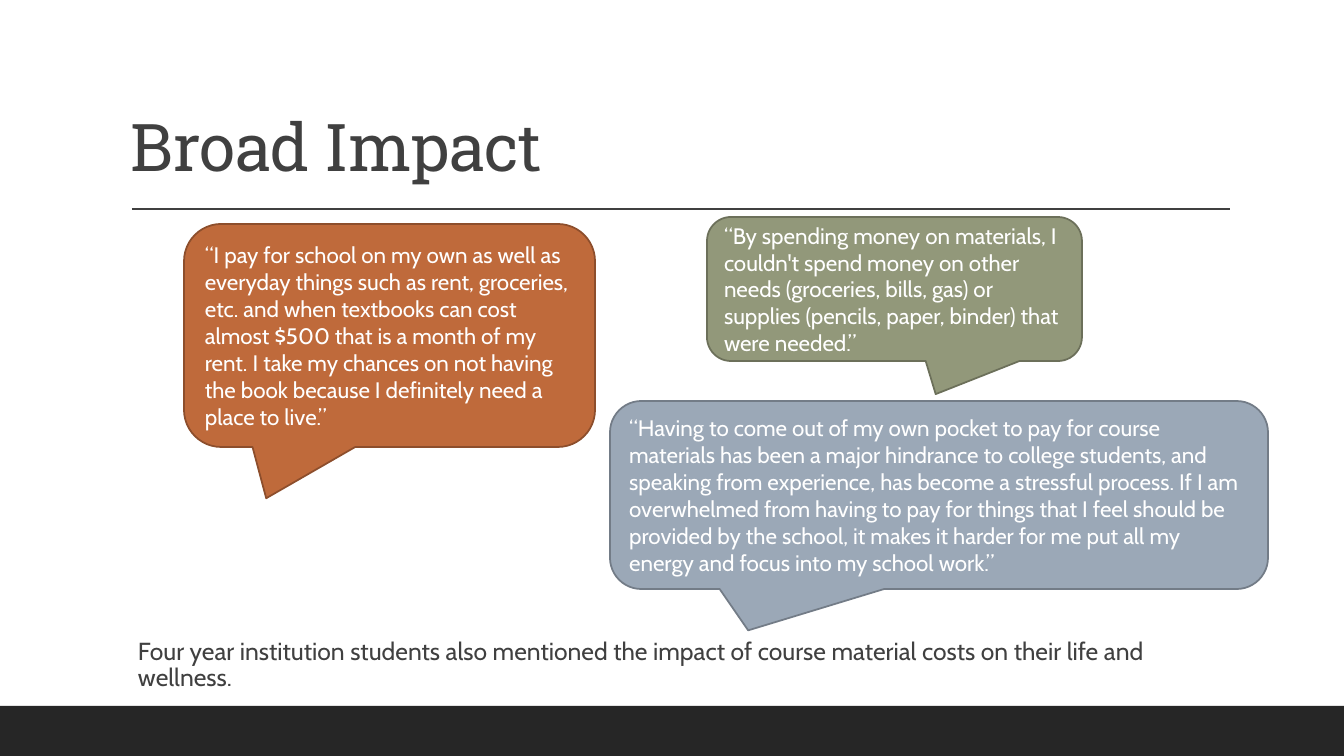
from pptx import Presentation
from pptx.dml.color import RGBColor
from pptx.enum.shapes import MSO_CONNECTOR, MSO_SHAPE
from pptx.enum.text import MSO_ANCHOR as ANCHOR, PP_ALIGN as ALIGN
from pptx.oxml.ns import qn
from pptx.util import Emu, Pt

INK = "404040"
BODY = "Cabin"

# box, fill, line, tip offset from the centre as shares of the box, words
QUOTES = [
    ((610, 401, 658, 188), "9BA8B7", "737C87", (-0.29, 0.72),
     "“Having to come out of my own pocket to pay for course materials has been "
     "a major hindrance to college students, and speaking from experience, has "
     "become a stressful process. If I am overwhelmed from having to pay for "
     "things that I feel should be provided by the school, it makes it harder "
     "for me put all my energy and focus into my school work.”"),
    ((184, 224, 411, 223), "BF6A3B", "8D4E2C", (-0.3, 0.73),
     "“I pay for school on my own as well as everyday things such as rent, "
     "groceries, etc. and when textbooks can cost almost $500 that is a month "
     "of my rent. I take my chances on not having the book because I definitely "
     "need a place to live.”"),
    ((707, 217, 375, 144), "92987A", "6C705A", (0.11, 0.73),
     "“By spending money on materials, I couldn't spend money on other needs "
     "(groceries, bills, gas) or supplies (pencils, paper, binder) that were "
     "needed.”"),
]


def px(n):
    return Emu(round(n * 914400 / 100.8))


def color(code):
    return RGBColor.from_string(code)


def write(shape, text, size, font=BODY, ink=INK, anchor=ANCHOR.TOP,
          inset=10, lead=None, before=0, after=0, track=None):
    frame = shape.text_frame
    frame.word_wrap = True
    frame.vertical_anchor = anchor
    frame.margin_left = frame.margin_right = px(inset)
    frame.margin_top = frame.margin_bottom = px(5)
    para = frame.paragraphs[0]
    para.alignment = ALIGN.LEFT
    para.space_before, para.space_after = Pt(before), Pt(after)
    if lead:
        para.line_spacing = lead
    run = para.add_run()
    run.text = text
    run.font.name, run.font.size = font, Pt(size)
    run.font.color.rgb = color(ink)
    if track:
        run.font._element.set("spc", str(round(track * 100)))


def add_text(slide, box, text, size, **form):
    write(slide.shapes.add_textbox(*map(px, box)), text, size, **form)


def add_band(slide, box):
    band = slide.shapes.add_shape(MSO_SHAPE.RECTANGLE, *map(px, box))
    band.shadow.inherit = False
    band.fill.solid()
    band.fill.fore_color.rgb = color("262626")
    band.line.fill.background()


def add_head(slide, box, text):
    """Place the title with the rule beneath it."""
    x, y, w, h = box
    rule_y = y + h + 18
    rule = slide.shapes.add_connector(
        MSO_CONNECTOR.STRAIGHT, *map(px, (x + 11, rule_y, x + w, rule_y)))
    rule.line.color.rgb = color(INK)
    rule.line.width = Pt(1)
    props = rule._element.spPr
    props.append(props.makeelement(qn("a:effectLst"), {}))
    add_text(slide, box, text, 47, font="Roboto Slab", anchor=ANCHOR.BOTTOM,
             lead=0.9, track=-0.5)


def add_quote(slide, box, fill, edge, tip, text):
    quote = slide.shapes.add_shape(
        MSO_SHAPE.ROUNDED_RECTANGULAR_CALLOUT, *map(px, box))
    quote.shadow.inherit = False
    quote.adjustments[0], quote.adjustments[1] = tip
    quote.fill.solid()
    quote.fill.fore_color.rgb = color(fill)
    quote.line.color.rgb = color(edge)
    quote.line.width = Pt(1.25)
    write(quote, text, 16, ink="FFFFFF", anchor=ANCHOR.MIDDLE)


def main():
    deck = Presentation()
    deck.slide_width, deck.slide_height = px(1344), px(756)
    slide = deck.slides.add_slide(deck.slide_layouts[6])
    add_band(slide, (0, 706, 1344, 50))
    add_head(slide, (121, 31, 1109, 160), "Broad Impact")
    add_text(slide, (128, 634, 1109, 66),
             "Four year institution students also mentioned the impact of "
             "course material costs on their life and wellness.",
             17.6, lead=0.9, before=12, after=2)
    for quote in QUOTES:
        add_quote(slide, *quote)
    deck.save("out.pptx")


if __name__ == "__main__":
    main()
